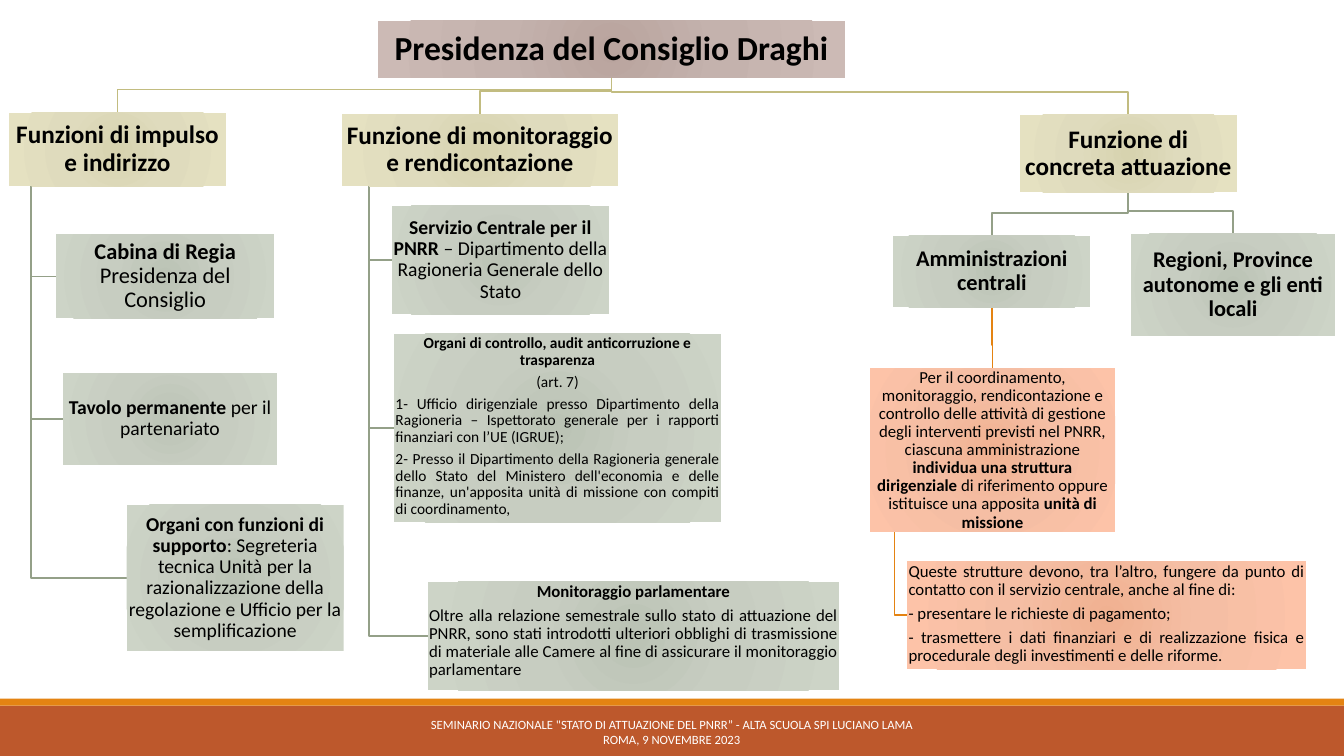
from pptx import Presentation
from pptx.dml.color import RGBColor
from pptx.enum.shapes import MSO_SHAPE
from pptx.enum.text import MSO_ANCHOR as Anchor, MSO_AUTO_SIZE as AutoSize, PP_ALIGN as Align
from pptx.oxml import parse_xml
from pptx.oxml.ns import nsdecls
from pptx.util import Pt

COLORS = {
    "black": "000000", "white": "FFFFFF", "footer": "BD582C", "stripe": "E48312",
    "yellow line": "C2BC80", "green line": "94A088", "orange line": "E48312",
}
GRADIENTS = {
    "rose": ("B9A49E", "C4B2AD", "CCBAB5"),
    "yellow": ("D7D3AF", "DFDBBD", "E5E1C1"),
    "green": ("BBC3B5", "C7CDC1", "CDD4C7"),
    "orange": ("F0B191", "F5BEA4", "FDC3A8"),
}


def write_text(shape, paragraphs, size, color="black", centered=1, spacing=0.9, after=0.35, inset=1):
    frame = shape.text_frame
    frame_format = {
        "word_wrap": True,
        "auto_size": AutoSize.NONE,
        "vertical_anchor": Anchor.MIDDLE if centered == len(paragraphs) else Anchor.TOP,
        "margin_left": Pt(inset), "margin_right": Pt(inset),
        "margin_top": Pt(inset), "margin_bottom": Pt(inset),
    }
    for name, value in frame_format.items():
        setattr(frame, name, value)
    for index, text in enumerate(paragraphs):
        paragraph = frame.add_paragraph() if index else frame.paragraphs[0]
        paragraph_format = {
            "alignment": Align.CENTER if index < centered else Align.JUSTIFY,
            "line_spacing": spacing,
            "space_before": Pt(0),
            "space_after": Pt(after * size),
        }
        for name, value in paragraph_format.items():
            setattr(paragraph, name, value)
        for position, part in enumerate(text.split("**")):
            if part:
                run = paragraph.add_run()
                run.text = part
                run_format = {"name": "Calibri", "size": Pt(size), "bold": position % 2 == 1}
                for name, value in run_format.items():
                    setattr(run.font, name, value)
                run.font.color.rgb = RGBColor.from_string(COLORS[color])


def fill_radial(shape, gradient):
    stops = "".join(
        f'<a:gs pos="{place}"><a:srgbClr val="{color}"/></a:gs>'
        for place, color in zip((0, 45000, 100000), GRADIENTS[gradient])
    )
    shape.fill.gradient()
    properties = shape.element.spPr
    linear = properties.find("{http://schemas.openxmlformats.org/drawingml/2006/main}gradFill")
    properties.replace(linear, parse_xml(
        f'<a:gradFill {nsdecls("a")} rotWithShape="1"><a:gsLst>{stops}</a:gsLst><a:path path="circle">'
        '<a:fillToRect l="100000" t="100000" r="100000" b="100000"/></a:path></a:gradFill>'
    ))


presentation = Presentation()
presentation.slide_width = Pt(960)
presentation.slide_height = Pt(540)
slide = presentation.slides.add_slide(presentation.slide_layouts[5])
shapes = slide.shapes

for color, top, height in (("footer", 504, 36), ("stripe", 499, 5)):
    bar = shapes.add_shape(MSO_SHAPE.RECTANGLE, 0, Pt(top), Pt(960), Pt(height))
    bar.shadow.inherit = False
    bar.fill.solid()
    bar.fill.fore_color.rgb = RGBColor.from_string(COLORS[color])
    bar.line.fill.background()

boxes = {
    "presidenza": ((270, 15, 333.5, 40.5), "rose", 24, 1, ["**Presidenza del Consiglio Draghi**"]),
    "impulso": ((6.5, 80.5, 155, 52.5), "yellow", 18, 1, ["**Funzioni di impulso e indirizzo**"]),
    "cabina": ((40, 167.5, 156, 60), "green", 16, 1, ["**Cabina di Regia **Presidenza del Consiglio"]),
    "tavolo": ((45, 266.5, 153, 65.5), "green", 14, 1, ["**Tavolo permanente **per il partenariato"]),
    "supporto": ((90.5, 360.5, 155, 104.5), "green", 14, 1, [
        "**Organi con funzioni di supporto**: Segreteria tecnica Unità per la razionalizzazione "
        "della regolazione e Ufficio per la semplificazione"]),
    "monitoraggio": ((244, 81.5, 197.5, 51.5), "yellow", 18, 1, [
        "**Funzione di monitoraggio e rendicontazione**"]),
    "servizio": ((280, 147, 155, 77.5), "green", 14, 1, [
        "**Servizio Centrale per il PNRR **– Dipartimento della Ragioneria Generale dello Stato"]),
    "controllo": ((281.5, 238.5, 233.5, 134.5), "green", 11, 2, [
        "**Organi di controllo, audit anticorruzione e trasparenza**",
        "(art. 7)",
        "1- Ufficio dirigenziale presso Dipartimento della Ragioneria – Ispettorato generale "
        "per i rapporti finanziari con l’UE (IGRUE);",
        "2- Presso il Dipartimento della Ragioneria generale dello Stato del Ministero "
        "dell'economia e delle finanze, un'apposita unità di missione con compiti di coordinamento,"]),
    "parlamento": ((305.5, 415.5, 294, 77.5), "green", 12, 1, [
        "**Monitoraggio parlamentare**",
        "Oltre alla relazione semestrale sullo stato di attuazione del PNRR, sono stati introdotti "
        "ulteriori obblighi di trasmissione di materiale alle Camere al fine di assicurare il "
        "monitoraggio parlamentare"]),
    "attuazione": ((728.5, 82, 155, 55.5), "yellow", 18, 1, ["**Funzione di concreta attuazione**"]),
    "centrali": ((638, 168.5, 141, 51), "green", 16, 1, ["**Amministrazioni centrali**"]),
    "struttura": ((621.5, 263, 175, 117), "orange", 12, 1, [
        "Per il coordinamento, monitoraggio, rendicontazione e controllo delle attività di gestione "
        "degli interventi previsti nel PNRR, ciascuna amministrazione **individua una struttura "
        "dirigenziale **di riferimento oppure istituisce una apposita **unità di missione**"]),
    "compiti": ((648, 401, 285, 77), "orange", 12, 0, [
        "Queste strutture devono, tra l’altro, fungere da punto di contatto con il servizio centrale, "
        "anche al fine di:",
        "- presentare le richieste di pagamento;",
        "- trasmettere i dati finanziari e di realizzazione fisica e procedurale degli investimenti "
        "e delle riforme."]),
    "regioni": ((808, 167, 145.5, 73), "green", 16, 1, ["**Regioni, Province autonome e gli enti locali**"]),
}

branches = [
    ("presidenza", "drop", ("impulso", "monitoraggio", "attuazione")),
    ("attuazione", "drop", ("centrali", "regioni")),
    ("centrali", "drop", ("struttura",)),
    ("impulso", "side", ("cabina", "tavolo", "supporto")),
    ("monitoraggio", "side", ("servizio", "controllo", "parlamento")),
    ("struttura", "side", ("compiti",)),
]
for parent, style, children in branches:
    left, top, width, height = boxes[parent][0]
    bottom = top + height
    for child in children:
        (child_left, child_top, child_width, child_height), gradient = boxes[child][:2]
        if style == "drop":
            center, child_center, bend = left + width / 2, child_left + child_width / 2, child_top - 16.5
            points = [(center, bottom), (center, bend), (child_center, bend), (child_center, child_top)]
        else:
            stem, middle = left + width / 10, child_top + child_height / 2
            points = [(stem, bottom), (stem, middle), (child_left, middle)]
        corners = [(Pt(x), Pt(y)) for x, y in points]
        builder = shapes.build_freeform(*corners[0])
        builder.add_line_segments(corners[1:], close=False)
        branch = builder.convert_to_shape()
        branch.shadow.inherit = False
        branch.fill.background()
        branch.line.width = Pt(1.25)
        branch.line.color.rgb = RGBColor.from_string(COLORS[f"{gradient} line"])

for name, (bounds, gradient, size, centered, paragraphs) in boxes.items():
    if name == "presidenza":
        box = shapes.title
        for side, value in zip(("left", "top", "width", "height"), bounds):
            setattr(box, side, Pt(value))
    else:
        box = shapes.add_shape(MSO_SHAPE.RECTANGLE, *map(Pt, bounds))
        box.shadow.inherit = False
    box.line.fill.background()
    fill_radial(box, gradient)
    write_text(box, paragraphs, size, centered=centered)

footer = shapes.add_textbox(Pt(290), Pt(508.5), Pt(379.5), Pt(28.5))
write_text(footer, [
    "SEMINARIO NAZIONALE \"STATO DI ATTUAZIONE DEL PNRR” - ALTA SCUOLA SPI LUCIANO LAMA",
    "ROMA, 9 NOVEMBRE 2023",
], 9, "white", centered=2, spacing=1, after=0, inset=3.5)

presentation.save("out.pptx")
